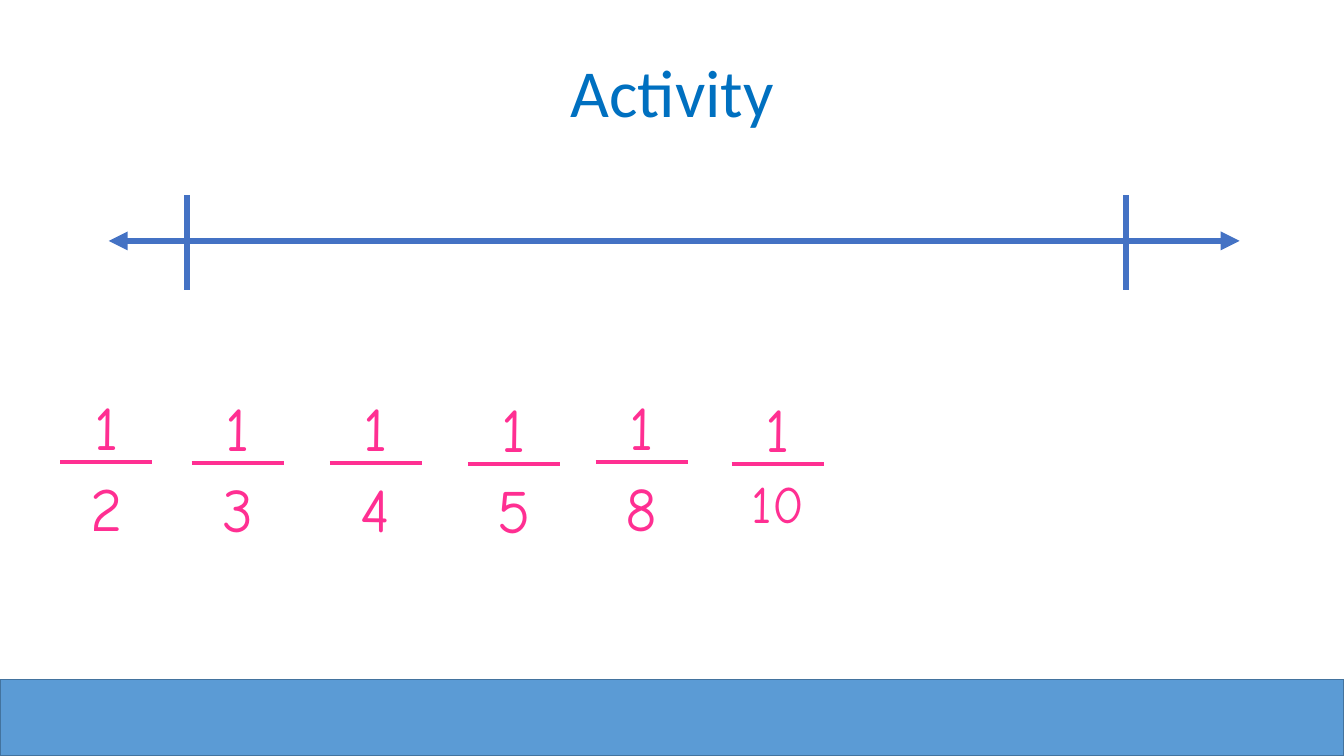
from dataclasses import dataclass

from lxml import etree
from pptx import Presentation
from pptx.dml.color import RGBColor
from pptx.enum import shapes, text
from pptx.oxml import ns
from pptx.util import Cm, Pt


@dataclass(frozen=True)
class Theme:
    title: RGBColor = RGBColor(0x00, 0x70, 0xC0)
    axis: RGBColor = RGBColor(0x44, 0x72, 0xC4)
    fraction: RGBColor = RGBColor(0xFF, 0x2F, 0x92)
    band: RGBColor = RGBColor(0x5B, 0x9B, 0xD5)
    band_edge: RGBColor = RGBColor(0x43, 0x73, 0x9E)
    title_font: str = "Calibri"
    fraction_font: str = "Comic Neue"
    title_size: float = 48
    digit_size: float = 44
    two_digit_size: float = 37.4


theme = Theme()


def draw_line(parent, start, end, color, width, arrows=False):
    """Add a straight line between two (x, y) points given in centimetres."""
    line = parent.add_connector(
        shapes.MSO_CONNECTOR.STRAIGHT, *(Cm(value) for value in start + end))
    line.line.color.rgb = color
    line.line.width = Pt(width)
    properties = line.element.spPr
    etree.SubElement(properties, ns.qn("a:effectLst"))
    if arrows:
        outline = properties.find(ns.qn("a:ln"))
        for tag in ("a:headEnd", "a:tailEnd"):
            etree.SubElement(outline, ns.qn(tag), type="triangle")


def write_number(parent, left, top, width, height, number):
    """Add one centred number of a fraction, smaller if it has two digits."""
    box = parent.add_textbox(Cm(left), Cm(top), Cm(width), Cm(height))
    box.text_frame.word_wrap = True
    para = box.text_frame.paragraphs[0]
    para.text = str(number)
    para.alignment = text.PP_ALIGN.CENTER
    size = theme.digit_size if number < 10 else theme.two_digit_size
    para.space_before = Pt(round(size * 0.2, 1))
    font = para.runs[0].font
    font.name = theme.fraction_font
    font.size = Pt(size)
    font.color.rgb = theme.fraction


deck = Presentation()
deck.slide_width, deck.slide_height = Cm(33.87), Cm(19.05)
page = deck.slides.add_slide(deck.slide_layouts[5])

# Title
title = page.shapes.title
title.left, title.top, title.width, title.height = Cm(1.7), Cm(1.12), Cm(30.48), Cm(2.31)
title.text_frame.text = "Activity"
title_para = title.text_frame.paragraphs[0]
title_para.alignment = text.PP_ALIGN.CENTER
title_font = title_para.runs[0].font
title_font.name = theme.title_font
title_font.size = Pt(theme.title_size)
title_font.color.rgb = theme.title

# Bottom band
band = page.shapes.add_shape(
    shapes.MSO_SHAPE.RECTANGLE, 0, Cm(17.12), deck.slide_width, Cm(1.93))
band.shadow.inherit = False
band.fill.solid()
band.fill.fore_color.rgb = theme.band
band.line.color.rgb = theme.band_edge
band.line.width = Pt(1)

# Number line with its two end marks
draw_line(page.shapes, (2.74, 6.07), (31.24, 6.07), theme.axis, 4.5, arrows=True)
for mark_x in (4.72, 28.37):
    draw_line(page.shapes, (mark_x, 4.92), (mark_x, 7.32), theme.axis, 4.5)

# Unit fractions: denominator, left, top
fractions = [
    (2, 1.52, 9.68),
    (3, 4.83, 9.7),
    (4, 8.31, 9.7),
    (5, 11.79, 9.73),
    (8, 15.01, 9.68),
    (10, 18.44, 9.73),
]
bar_width = 2.32
for denominator, left, top in fractions:
    fraction = page.shapes.add_group_shape().shapes
    bar_y = top + 1.97
    write_number(fraction, left, top, bar_width, 2.44, 1)
    draw_line(fraction, (left, bar_y), (left + bar_width, bar_y), theme.fraction, 3)
    write_number(fraction, left + 0.17, top + 2.03, 1.98, 2.77, denominator)

deck.save("out.pptx")
